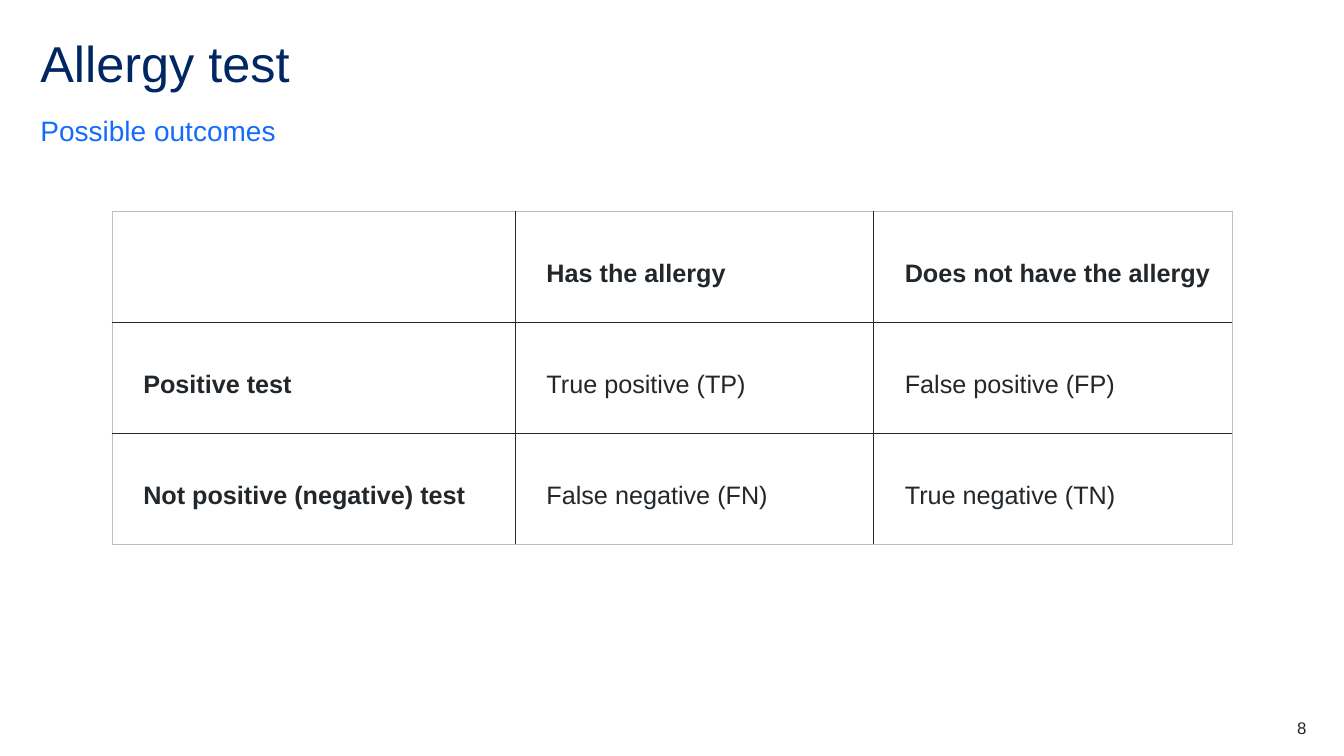
import pptx
import pptx.dml.color
import pptx.enum.text
import pptx.oxml
import pptx.oxml.ns
import pptx.util

RGBColor = pptx.dml.color.RGBColor
NAVY = RGBColor(0x00, 0x26, 0x64)
BLUE = RGBColor(0x14, 0x6C, 0xFD)
INK = RGBColor(0x22, 0x27, 0x2B)
GREY = RGBColor(0xBF, 0xBF, 0xBF)
WHITE = RGBColor(0xFF, 0xFF, 0xFF)

WIDTH = pptx.util.Inches(13.33)
HEIGHT = pptx.util.Inches(7.5)
COLUMN = 1 / 12

ANCHOR = pptx.enum.text.MSO_ANCHOR
ALIGN = pptx.enum.text.PP_ALIGN

OUTCOMES = [
    ["", "Has the allergy", "Does not have the allergy"],
    ["Positive test", "True positive (TP)", "False positive (FP)"],
    ["Not positive (negative) test", "False negative (FN)", "True negative (TN)"],
]
COLUMN_SHARES = [0.36, 0.32, 0.32]


def slide_box(left, top, width, height):
    """Turn shares of the slide's size into a box of lengths."""
    return (round(left * WIDTH), round(top * HEIGHT),
            round(width * WIDTH), round(height * HEIGHT))


def write_text(frame, text, *, size, color=INK, bold=False, align=ALIGN.LEFT,
               line=1.0, before=0, after=0):
    """Write one formatted paragraph into a text frame."""
    para = frame.paragraphs[0]
    para.alignment = align
    para.line_spacing = line
    para.space_before = pptx.util.Pt(before)
    para.space_after = pptx.util.Pt(after)
    span = para.add_run()
    span.text = text
    span.font.name = "Arial"
    span.font.size = pptx.util.Pt(size)
    span.font.bold = bold
    span.font.color.rgb = color


def add_label(page, box, text, anchor=ANCHOR.TOP, **text_format):
    """Place a text box without insets that fills the given box."""
    frame = page.shapes.add_textbox(*box).text_frame
    frame.word_wrap = True
    frame.vertical_anchor = anchor
    frame.margin_left = frame.margin_right = 0
    frame.margin_top = frame.margin_bottom = 0
    write_text(frame, text, **text_format)


def add_heading(page, box):
    """Place the title at the top of the box and the subtitle at its bottom."""
    left, top, width, height = box
    title_height = round(height * 0.56)
    subtitle_height = round(height * 0.36)
    add_label(page, (left, top, width, title_height), "Allergy test",
              size=36, color=NAVY, line=0.9)
    add_label(page, (left, top + height - subtitle_height, width, subtitle_height),
              "Possible outcomes", anchor=ANCHOR.BOTTOM,
              size=20, color=BLUE, line=1.5, after=12)


def draw_borders(cell, sides):
    """Draw the cell's borders from pairs of side and (colour, points)."""
    properties = cell._tc.get_or_add_tcPr()
    for position, (side, (color, points)) in enumerate(sides):
        properties.insert(position, pptx.oxml.parse_xml(
            f'<a:ln{side} {pptx.oxml.ns.nsdecls("a")} w="{pptx.util.Pt(points)}">'
            f'<a:solidFill><a:srgbClr val="{color}"/></a:solidFill></a:ln{side}>'))


def add_outcome_table(page, box):
    """Fill the box with the table of test outcomes."""
    left, top, width, height = box
    last_row, last_column = len(OUTCOMES) - 1, len(COLUMN_SHARES) - 1
    table = page.shapes.add_table(last_row + 1, last_column + 1, *box).table
    table.first_row = table.horz_banding = False
    for column, share in zip(table.columns, COLUMN_SHARES):
        column.width = round(width * share)
    inner, outer = (INK, 1), (GREY, 0.5)
    for r, texts in enumerate(OUTCOMES):
        table.rows[r].height = round(height / len(OUTCOMES))
        for c, text in enumerate(texts):
            cell = table.cell(r, c)
            cell.fill.solid()
            cell.fill.fore_color.rgb = WHITE
            cell.vertical_anchor = ANCHOR.MIDDLE
            cell.margin_left = pptx.util.Inches(0.31)
            cell.margin_right = pptx.util.Inches(0.07)
            cell.margin_top = cell.margin_bottom = 0
            draw_borders(cell, [
                ("L", inner if c else outer),
                ("R", inner if c < last_column else outer),
                ("T", inner if r else outer),
                ("B", inner if r < last_row else outer),
            ])
            if text:
                write_text(cell.text_frame, text, size=18, bold=r == 0 or c == 0,
                           line=1.5, before=12, after=6)


def add_page_number(page, box):
    """Place the page number at the right of the box."""
    add_label(page, box, "8", size=12, align=ALIGN.RIGHT)


def main():
    """Build the slide and save it."""
    deck = pptx.Presentation()
    deck.slide_width, deck.slide_height = WIDTH, HEIGHT
    page = deck.slides.add_slide(deck.slide_layouts[6])
    add_heading(page, slide_box(0.03, 0.052, 0.94, 0.143))
    add_outcome_table(page, slide_box(COLUMN, 0.28, 10 * COLUMN, 0.44))
    add_page_number(page, slide_box(0.91, 0.95, 0.062, 0.027))
    deck.save("out.pptx")


if __name__ == "__main__":
    main()
